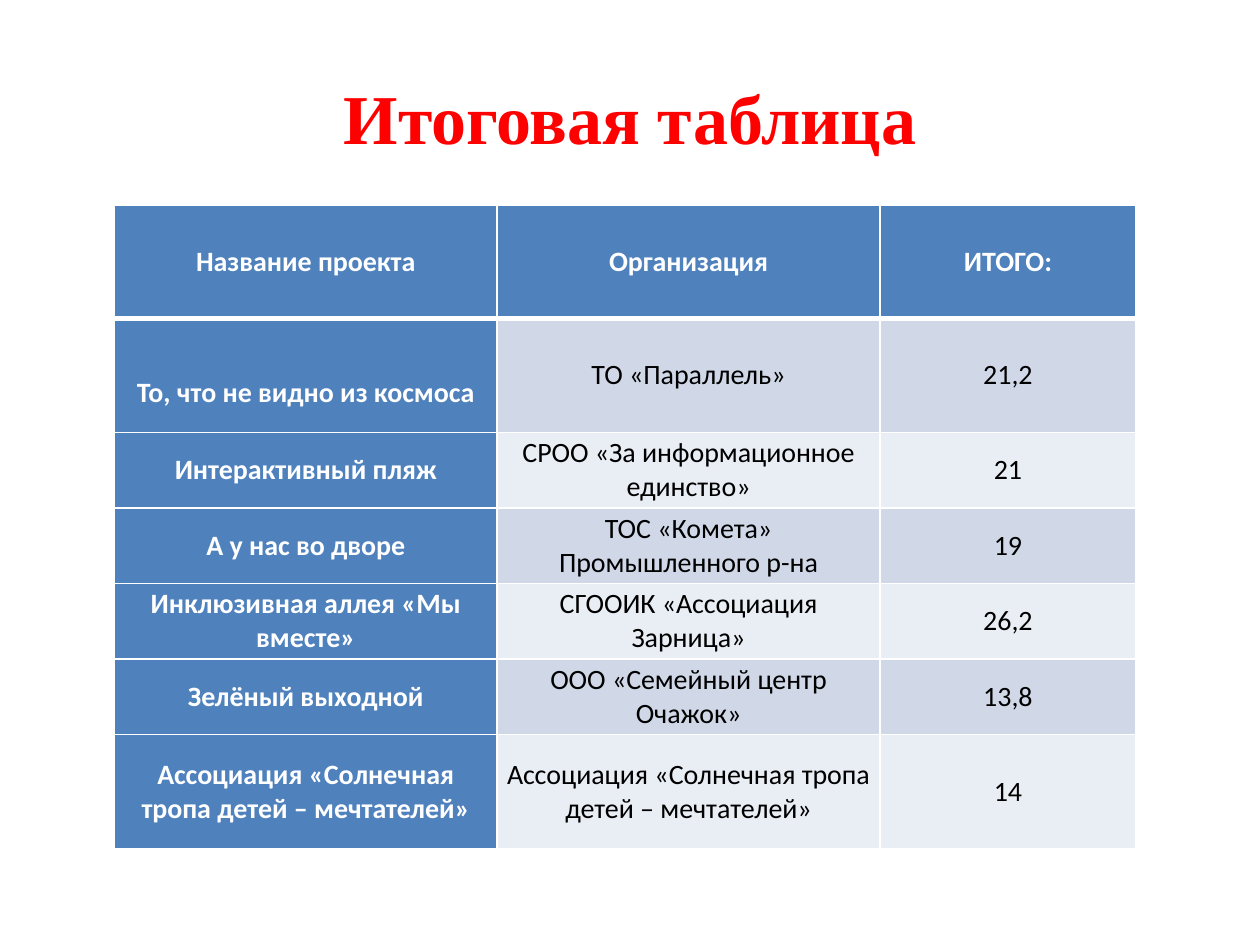
from lxml.etree import SubElement
from pptx import Presentation
from pptx.dml.color import RGBColor
from pptx.enum.text import MSO_ANCHOR, PP_ALIGN
from pptx.oxml.ns import qn
from pptx.util import Pt

# Content
TITLE = "Итоговая таблица"
ASSOCIATION = "Ассоциация «Солнечная тропа детей – мечтателей»"
ROWS = [
    ("Название проекта", "Организация", "ИТОГО:"),
    ("То, что не видно из космоса", "ТО «Параллель»", "21,2"),
    ("Интерактивный пляж", "СРОО «За информационное единство»", "21"),
    ("А у нас во дворе", "ТОС «Комета» Промышленного р-на", "19"),
    ("Инклюзивная аллея «Мы вместе»", "СГООИК «Ассоциация Зарница»", "26,2"),
    ("Зелёный выходной", "ООО «Семейный центр Очажок»", "13,8"),
    (ASSOCIATION, ASSOCIATION, "14"),
]

# Layout and formats
COL_WIDTHS = [218.5, 219, 146]
ROW_HEIGHTS = [65, 65, 43.2, 43.2, 43.2, 43.2, 65]
LINE_HEIGHT = 19.5
LOWERED_CELL = (1, 0)  # this project name sits half a line below the middle
BLUE, BANDS = "4F81BD", ("E9EDF4", "D0D8E8")
TITLE_FONT = {"name": "Times New Roman", "size": Pt(40), "bold": True}
HEAD_FONT = {"name": "Calibri", "size": Pt(16), "bold": True}
BODY_FONT = {**HEAD_FONT, "bold": False}


def rgb(color):
    return RGBColor.from_string(color)


def write(tf, text, font, color):
    p = tf.paragraphs[0]
    p.alignment = PP_ALIGN.CENTER
    r = p.add_run()
    r.text = text
    for key, value in font.items():
        setattr(r.font, key, value)
    r.font.color.rgb = rgb(color)


def set_borders(cell, widths):
    tc_pr = cell._tc.get_or_add_tcPr()
    for side, width in widths.items():
        ln = SubElement(tc_pr, qn(f"a:ln{side}"), w=str(Pt(width)))
        fill = SubElement(ln, qn("a:solidFill"))
        SubElement(fill, qn("a:srgbClr"), val="FFFFFF")


prs = Presentation()
prs.slide_width, prs.slide_height = Pt(720), Pt(540)
s = prs.slides.add_slide(prs.slide_layouts[6])

# Title
tf = s.shapes.add_textbox(Pt(36), Pt(21.6), Pt(648), Pt(90)).text_frame
tf.word_wrap = True
tf.vertical_anchor = MSO_ANCHOR.MIDDLE
write(tf, TITLE, TITLE_FONT, "FF0000")

# Results table
table = s.shapes.add_table(len(ROWS), len(COL_WIDTHS), Pt(65.5), Pt(117),
                           Pt(sum(COL_WIDTHS)), Pt(sum(ROW_HEIGHTS))).table
for column, width in zip(table.columns, COL_WIDTHS):
    column.width = Pt(width)
for row, height in zip(table.rows, ROW_HEIGHTS):
    row.height = Pt(height)

for i, texts in enumerate(ROWS):
    for j, text in enumerate(texts):
        cell = table.cell(i, j)
        heading = i == 0 or j == 0
        cell.vertical_anchor = MSO_ANCHOR.MIDDLE
        cell.margin_left = cell.margin_right = Pt(5)
        cell.margin_top = Pt(LINE_HEIGHT if (i, j) == LOWERED_CELL else 0)
        cell.margin_bottom = Pt(0)
        set_borders(cell, {"L": 1, "R": 1, "T": 3 if i == 1 else 1,
                           "B": 3 if i == 0 else 1})
        cell.fill.solid()
        cell.fill.fore_color.rgb = rgb(BLUE if heading else BANDS[i % 2])
        write(cell.text_frame, text, HEAD_FONT if heading else BODY_FONT,
              "FFFFFF" if heading else "000000")

prs.save("out.pptx")
